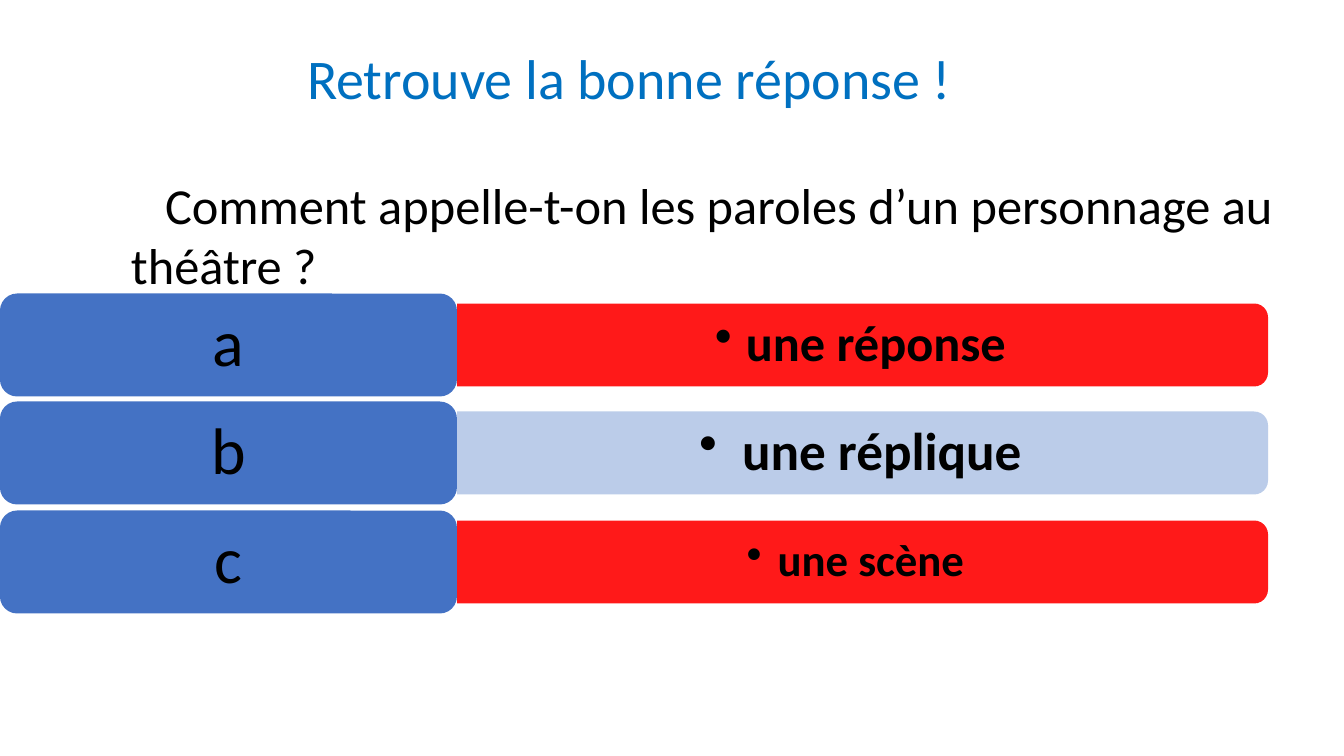
"""Build a quiz slide with one question and three lettered answers."""
from lxml import etree
from pptx import Presentation
from pptx.dml.color import RGBColor
from pptx.enum.shapes import MSO_SHAPE
from pptx.enum.text import MSO_ANCHOR, MSO_AUTO_SIZE, PP_ALIGN
from pptx.oxml.ns import qn
from pptx.util import Pt

SCALE = 914400 / 100.8
CENTER, LEFT = PP_ALIGN.CENTER, PP_ALIGN.LEFT
MIDDLE, TOP = MSO_ANCHOR.MIDDLE, MSO_ANCHOR.TOP
LABEL_SHAPE, BAR_SHAPE = MSO_SHAPE.ROUNDED_RECTANGLE, MSO_SHAPE.ROUND_2_SAME_RECTANGLE
LABEL_WIDTH, LABEL_HEIGHT = 457, 103
BAR_LENGTH, BAR_HEIGHT = 811, 83
ANSWERS = [
    ("a", "une réponse", 36, "FF0000"),
    ("b", " une réplique", 38, "B4C7E7"),
    ("c", "une scène ", 32, "FF0000"),
]


def box(*lengths):
    return [round(length * SCALE) for length in lengths]


def write(shape, text, size, color="000000", align=CENTER, anchor=MIDDLE, inset=(10, 5)):
    frame = shape.text_frame
    frame.word_wrap = True
    frame.auto_size = MSO_AUTO_SIZE.NONE
    frame.vertical_anchor = anchor
    frame.margin_left, frame.margin_top = box(*inset)
    frame.margin_right, frame.margin_bottom = box(*inset)
    paragraph = frame.paragraphs[0]
    paragraph.alignment = align
    run = paragraph.add_run()
    run.text = text
    run.font.name = "Calibri"
    run.font.size = Pt(size)
    run.font.color.rgb = RGBColor.from_string(color)
    return paragraph


presentation = Presentation()
presentation.slide_width, presentation.slide_height = box(1344, 756)
slide = presentation.slides.add_slide(presentation.slide_layouts[5])
shapes = slide.shapes

title = shapes.title
title.left, title.top, title.width, title.height = box(177, 38, 917, 78)
write(title, "Retrouve la bonne réponse ! ", 40, "0070C0", anchor=TOP)

for row, (letter, answer, size, color) in enumerate(ANSWERS):
    middle = 345 + row * 217 // 2

    bar_left = LABEL_WIDTH + (BAR_LENGTH - BAR_HEIGHT) / 2
    bar = shapes.add_shape(
        BAR_SHAPE, *box(bar_left, middle - BAR_LENGTH / 2, BAR_HEIGHT, BAR_LENGTH))
    bar.rotation = 90
    label = shapes.add_shape(
        LABEL_SHAPE, *box(0, middle - LABEL_HEIGHT / 2, LABEL_WIDTH, LABEL_HEIGHT))
    for shape, fill in ((bar, color), (label, "4472C4")):
        shape.shadow.inherit = False
        shape.fill.solid()
        shape.fill.fore_color.rgb = RGBColor.from_string(fill)
        shape.line.fill.background()
    bar_color = bar.fill._xPr.find(".//" + qn("a:srgbClr"))
    etree.SubElement(bar_color, qn("a:alpha"), val="90000")
    write(label, letter, 47).line_spacing = 0.9

    answer_box = shapes.add_textbox(*box(LABEL_WIDTH, middle - 37, 807, 74))
    paragraph = write(answer_box, answer, size, inset=(27, 14))
    paragraph.line_spacing = 0.9
    paragraph.runs[0].font.bold = True
    properties = paragraph._p.get_or_add_pPr()
    indent = box(31)[0]
    properties.set("marL", str(indent))
    properties.set("indent", str(-indent))
    etree.SubElement(properties, qn("a:buChar"), char="•")

question = shapes.add_textbox(*box(121, 169, 1176, 132))
paragraph = write(
    question, "Comment appelle-t-on les paroles d’un personnage au théâtre ?",
    36, align=LEFT, anchor=TOP)
paragraph._p.get_or_add_pPr().set("indent", str(box(34)[0]))

presentation.save("out.pptx")
